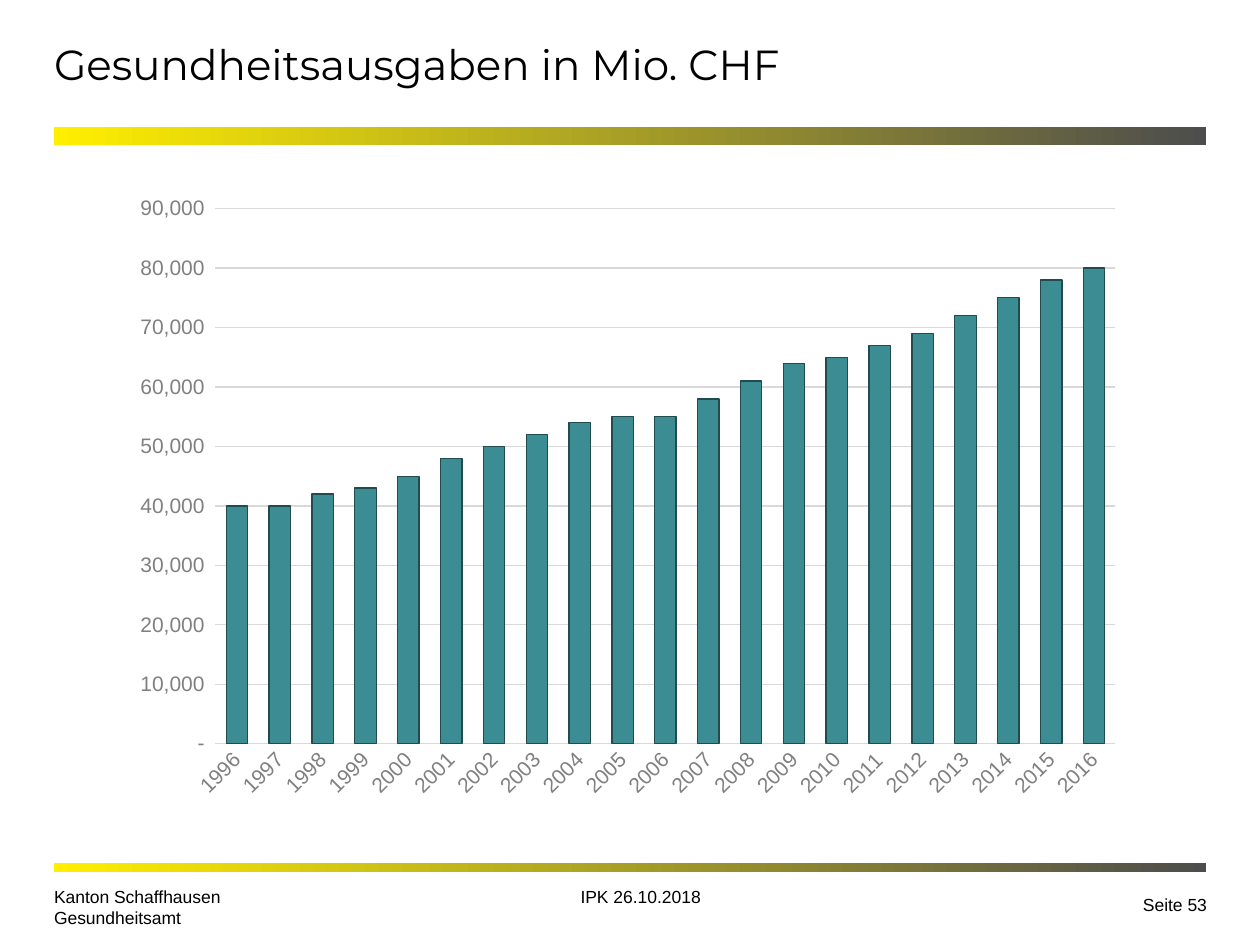
from pptx import Presentation
from pptx.chart.data import CategoryChartData
from pptx.dml.color import RGBColor
from pptx.enum.chart import XL_CHART_TYPE, XL_TICK_MARK
from pptx.enum.shapes import MSO_SHAPE
from pptx.enum.text import MSO_ANCHOR, PP_ALIGN
from pptx.util import Cm, Pt

COLUMN = XL_CHART_TYPE.COLUMN_CLUSTERED
NO_TICK = XL_TICK_MARK.NONE
RECTANGLE = MSO_SHAPE.RECTANGLE
TOP, MIDDLE, BOTTOM = MSO_ANCHOR.TOP, MSO_ANCHOR.MIDDLE, MSO_ANCHOR.BOTTOM
LEFT, CENTER, RIGHT = PP_ALIGN.LEFT, PP_ALIGN.CENTER, PP_ALIGN.RIGHT

COLORS = {
    "text": "000000",
    "yellow": "FFEE00",
    "dark": "4D4D4D",
    "label": "808080",
    "grid": "D9D9D9",
    "column": "3C8C93",
    "outline": "224B50",
}
MARGIN = 1.09
CONTENT_WIDTH = 23.22
YEARS = range(1996, 2017)
SPENDING = [
    40000, 40000, 42000, 43000, 45000, 48000, 50000,
    52000, 54000, 55000, 55000, 58000, 61000, 64000,
    65000, 67000, 69000, 72000, 75000, 78000, 80000,
]
NUMBER_FORMAT = '" "#,##0" ";" -"#,##0" ";" -"#" ";" "@" "'


def color(name):
    return RGBColor.from_string(COLORS[name])


def set_font(font, size, name="Arial", color_name="text"):
    for key, value in {"name": name, "size": Pt(size), "bold": False}.items():
        setattr(font, key, value)
    font.color.rgb = color(color_name)


def set_line(line, color_name):
    line.color.rgb = color(color_name)
    line.width = Pt(0.75)


def add_text(slide, box, lines, size=10, font_name="Arial",
             alignment=LEFT, anchor=TOP, inset=0.25):
    frame = slide.shapes.add_textbox(*map(Cm, box)).text_frame
    formats = {
        "word_wrap": True,
        "vertical_anchor": anchor,
        "margin_left": Cm(inset),
        "margin_right": Cm(inset),
    }
    for key, value in formats.items():
        setattr(frame, key, value)
    frame.text = "\n".join(lines)
    for paragraph in frame.paragraphs:
        paragraph.alignment = alignment
        set_font(paragraph.font, size, font_name)


def add_gradient_bar(slide, box):
    bar = slide.shapes.add_shape(RECTANGLE, *map(Cm, box))
    bar.shadow.inherit = False
    bar.line.fill.background()
    bar.fill.gradient()
    bar.fill.gradient_angle = 0
    for stop, position, name in zip(bar.fill.gradient_stops, (0, 1), ("yellow", "dark")):
        stop.position = position
        stop.color.rgb = color(name)


def add_header(slide, box):
    left, top, width, height = box
    bar_height = 0.36
    title_height = height - bar_height
    add_text(slide, (left, top, 18.14, title_height), ["Gesundheitsausgaben in Mio. CHF"],
             size=24, font_name="Montserrat", anchor=MIDDLE, inset=0)
    add_gradient_bar(slide, (left, top + title_height, width, bar_height))


def add_spending_chart(slide, box):
    data = CategoryChartData()
    data.categories = [str(year) for year in YEARS]
    data.add_series("Series 1", SPENDING)
    chart = slide.shapes.add_chart(COLUMN, *map(Cm, box), data).chart
    chart.has_legend = False
    chart.has_title = False
    set_font(chart.font, 10)

    plot = chart.plots[0]
    for key, value in {"gap_width": 100, "overlap": -24, "vary_by_categories": False}.items():
        setattr(plot, key, value)
    series = plot.series[0]
    series.format.fill.solid()
    series.format.fill.fore_color.rgb = color("column")
    set_line(series.format.line, "outline")

    for axis in (chart.category_axis, chart.value_axis):
        axis.major_tick_mark = NO_TICK
        axis.minor_tick_mark = NO_TICK
        set_font(axis.tick_labels.font, 12, color_name="label")
    years_axis, amount_axis = chart.category_axis, chart.value_axis
    set_line(years_axis.format.line, "grid")
    body = years_axis._element.xpath("c:txPr/a:bodyPr")[0]
    body.set("rot", "-2700000")
    body.set("vert", "horz")

    amount_axis.format.line.fill.background()
    for key, value in {"minimum_scale": 0, "maximum_scale": 90000, "major_unit": 10000}.items():
        setattr(amount_axis, key, value)
    amount_axis.has_major_gridlines = True
    set_line(amount_axis.major_gridlines.format.line, "grid")
    amount_axis.tick_labels.number_format = NUMBER_FORMAT
    amount_axis.tick_labels.number_format_is_linked = False


def add_footer(slide, box):
    left, top, width, height = box
    add_gradient_bar(slide, (left, top, width, 0.19))
    text_top = top + 0.22
    add_text(slide, (left, text_top, 6.73, 1.22),
             ["Kanton Schaffhausen", "Gesundheitsamt"], anchor=BOTTOM, inset=0)
    add_text(slide, (left + 7.8, top + 0.33, 8.05, height - 0.33),
             ["IPK 26.10.2018"], alignment=CENTER)
    add_text(slide, (left + 21.1, text_top, 2.39, 1.22),
             ["Seite 53"], alignment=RIGHT, anchor=MIDDLE)


def main():
    presentation = Presentation()
    presentation.slide_width = Cm(25.4)
    presentation.slide_height = Cm(19.05)
    slide = presentation.slides.add_slide(presentation.slide_layouts[6])
    add_header(slide, (MARGIN, 0, CONTENT_WIDTH, 2.93))
    add_spending_chart(slide, (2.3, 3.73, 20.6, 12.6))
    add_footer(slide, (MARGIN, 17.4, CONTENT_WIDTH, 1.65))
    presentation.save("out.pptx")


if __name__ == "__main__":
    main()
